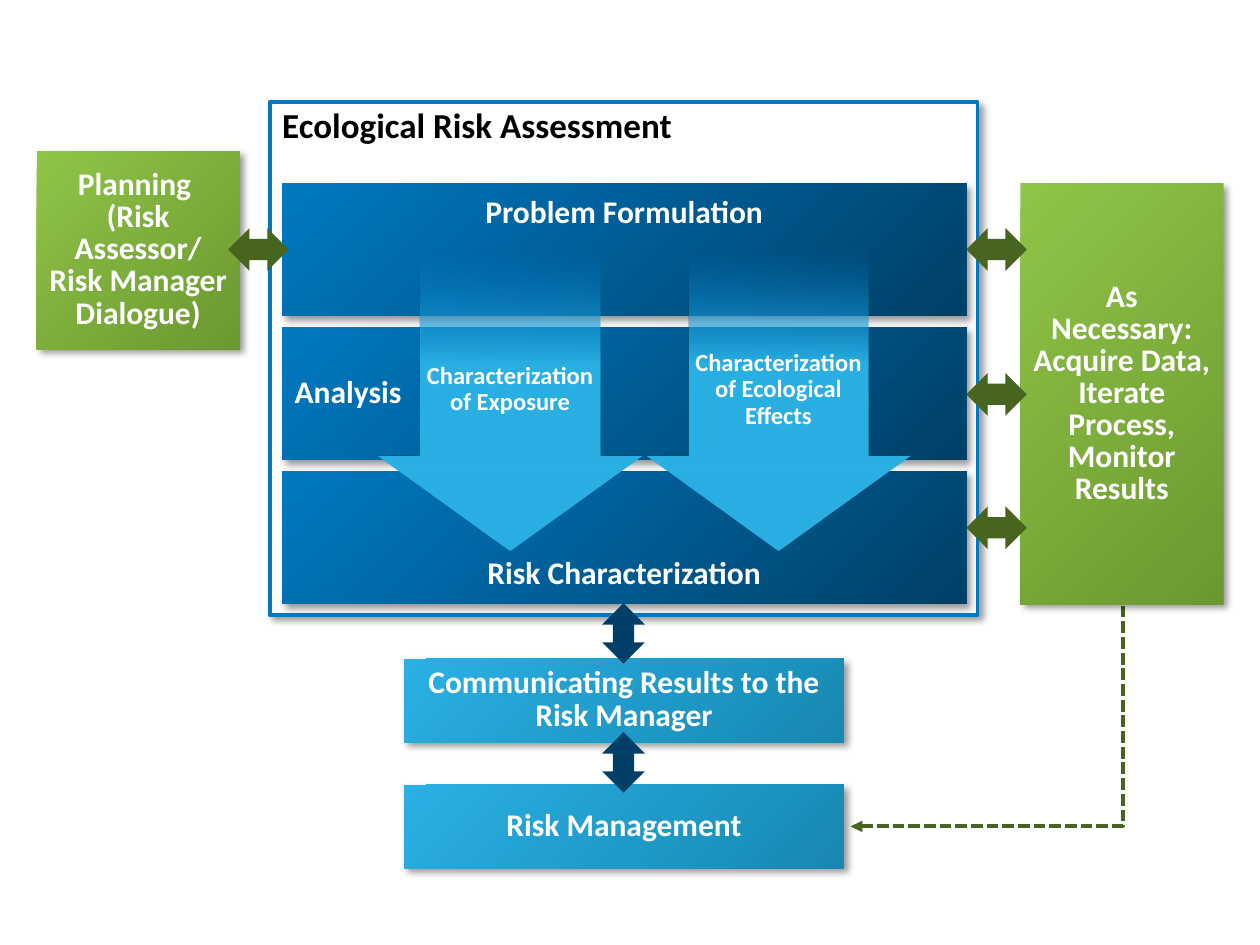
import pptx
import pptx.dml.color
import pptx.enum.dml
import pptx.enum.shapes
import pptx.enum.text
import pptx.oxml
import pptx.oxml.ns
import pptx.util
from pptx.util import Cm

SHAPE = pptx.enum.shapes.MSO_SHAPE
ALIGN = pptx.enum.text.PP_ALIGN
ANCHOR = pptx.enum.text.MSO_ANCHOR
NS = pptx.oxml.ns.nsdecls("a")

COLORS = {
    "white": "FFFFFF", "black": "000000",
    "blue": "0079C1", "navy": "004068",
    "sky": "2AB0E3", "teal": "1788B2",
    "lime": "8FC447", "green": "6C9831", "olive": "486520",
}


def rgb(name):
    return pptx.dml.color.RGBColor.from_string(COLORS[name])


def write(tf, text, size=18, color="white", align=ALIGN.CENTER, spacing=0.9,
          anchor=ANCHOR.MIDDLE, top=0.13, bottom=0.13):
    """Fill a text frame with one bold paragraph; newlines become line breaks."""
    tf.word_wrap = True
    tf.vertical_anchor = anchor
    tf.margin_left = tf.margin_right = Cm(0.25)
    tf.margin_top, tf.margin_bottom = Cm(top), Cm(bottom)
    p = tf.paragraphs[0]
    p.alignment, p.line_spacing = align, spacing
    for i, line in enumerate(text.split("\n")):
        if i:
            p.add_line_break()
        r = p.add_run()
        r.text = line
        r.font.name, r.font.bold = "Calibri", True
        r.font.size = pptx.util.Pt(size)
        r.font.color.rgb = rgb(color)


class Diagram:
    def __init__(self, slide):
        self.s = slide

    def shape(self, kind, x, y, w, h, fill):
        sp = self.s.shapes.add_shape(kind, Cm(x), Cm(y), Cm(w), Cm(h))
        sp.shadow.inherit = False
        sp.line.fill.background()
        if isinstance(fill, str):
            sp.fill.solid()
            sp.fill.fore_color.rgb = rgb(fill)
        else:
            sp.fill.gradient()
            sp.fill.gradient_angle = 315
            for stop, name in zip(sp.fill.gradient_stops, fill):
                stop.color.rgb = rgb(name)
        return sp

    def box(self, x, y, w, h, fill, text, **fmt):
        sp = self.shape(SHAPE.RECTANGLE, x, y, w, h, fill)
        effects = sp._element.spPr.find(pptx.oxml.ns.qn("a:effectLst"))
        effects.append(pptx.oxml.parse_xml(
            f'<a:outerShdw {NS} blurRad="50800" dist="38100" dir="2700000" '
            f'algn="tl" rotWithShape="0"><a:srgbClr val="{COLORS["black"]}">'
            '<a:alpha val="40000"/></a:srgbClr></a:outerShdw>'))
        write(sp.text_frame, text, **fmt)
        return sp

    def fading_arrow(self, x, y, w, h):
        sp = self.shape(SHAPE.DOWN_ARROW, x, y, w, h, ("blue", "sky"))
        sp.adjustments[0], sp.adjustments[1] = 0.68, 0.36
        sp.fill.gradient_angle = 270
        sp.fill.gradient_stops[1].position = 0.38
        first_color = sp._element.spPr.find(".//" + pptx.oxml.ns.qn("a:srgbClr"))
        first_color.append(pptx.oxml.parse_xml(f'<a:alpha {NS} val="0"/>'))

    def label(self, x, y, w, h, text):
        tb = self.s.shapes.add_textbox(Cm(x), Cm(y), Cm(w), Cm(h))
        write(tb.text_frame, text, size=14, anchor=ANCHOR.TOP)
        tb.text_frame.auto_size = pptx.enum.text.MSO_AUTO_SIZE.SHAPE_TO_FIT_TEXT

    def double_arrow(self, x, y, fill, rotation=0):
        sp = self.shape(SHAPE.LEFT_RIGHT_ARROW, x, y, 1.22, 0.86, fill)
        sp.rotation = rotation

    def dashed_path(self, points, color):
        start, *rest = [(Cm(x), Cm(y)) for x, y in points]
        builder = self.s.shapes.build_freeform(*start)
        builder.add_line_segments(rest, close=False)
        sp = builder.convert_to_shape()
        sp.shadow.inherit = False
        sp.fill.background()
        sp.line.color.rgb = rgb(color)
        sp.line.width = pptx.util.Pt(2.25)
        sp.line.dash_style = pptx.enum.dml.MSO_LINE.SQUARE_DOT
        ln = sp._element.spPr.find(pptx.oxml.ns.qn("a:ln"))
        ln.append(pptx.oxml.parse_xml(f'<a:tailEnd {NS} type="triangle"/>'))


def main():
    prs = pptx.Presentation()
    prs.slide_width, prs.slide_height = Cm(25.4), Cm(19.05)
    d = Diagram(prs.slides.add_slide(prs.slide_layouts[6]))

    # Feedback path from monitoring to risk management
    d.dashed_path([(22.63, 11.58), (22.63, 16.66), (17.15, 16.66)], "olive")

    # Assessment frame
    frame = d.box(5.44, 2.06, 14.27, 10.34, "white", "Ecological Risk Assessment",
                  size=20, color="black", align=ALIGN.LEFT, anchor=ANCHOR.TOP)
    frame.line.color.rgb = rgb("blue")
    frame.line.width = pptx.util.Pt(2)

    # Three assessment stages
    stages = [
        ("Problem Formulation", dict(anchor=ANCHOR.TOP, top=0.25)),
        ("Analysis", dict(align=ALIGN.LEFT)),
        ("Risk Characterization", dict(anchor=ANCHOR.BOTTOM, bottom=0.25)),
    ]
    for i, (text, fmt) in enumerate(stages):
        d.box(5.69, 3.7 + 2.9 * i, 13.79, 2.67, ("blue", "navy"), text, **fmt)

    # Outcomes below the frame
    outcomes = ["Communicating Results to the Risk Manager", "Risk Management"]
    for i, text in enumerate(outcomes):
        d.box(8.15, 13.28 + 2.54 * i, 8.86, 1.68, ("sky", "teal"), text, spacing=0.85)

    # Side boxes
    sides = [
        (0.74, 3.05, 3.99, "Planning \n(Risk Assessor/\nRisk Manager Dialogue)"),
        (20.57, 3.7, 8.48,
         "As\nNecessary: Acquire Data, Iterate Process, Monitor Results"),
    ]
    for x, y, h, text in sides:
        d.box(x, y, 4.09, h, ("lime", "green"), text, spacing=0.85)

    # Analysis arrows with their labels
    analyses = [
        (7.62, 7.19, 1.35, "Characterization of Exposure"),
        (13.03, 6.93, 1.88, "Characterization of Ecological Effects"),
    ]
    for x, y, h, text in analyses:
        d.fading_arrow(x, 5.05, 5.33, 6.05)
        d.label(x + 0.71, y, 3.91, h, text)

    # Two-way links
    for x, y in [(4.6, 4.6), (19.48, 4.6), (19.48, 7.52), (19.48, 10.21)]:
        d.double_arrow(x, y, "olive")
    for y in (12.34, 14.94):
        d.double_arrow(11.96, y, "navy", rotation=270)

    prs.save("out.pptx")


if __name__ == "__main__":
    main()
